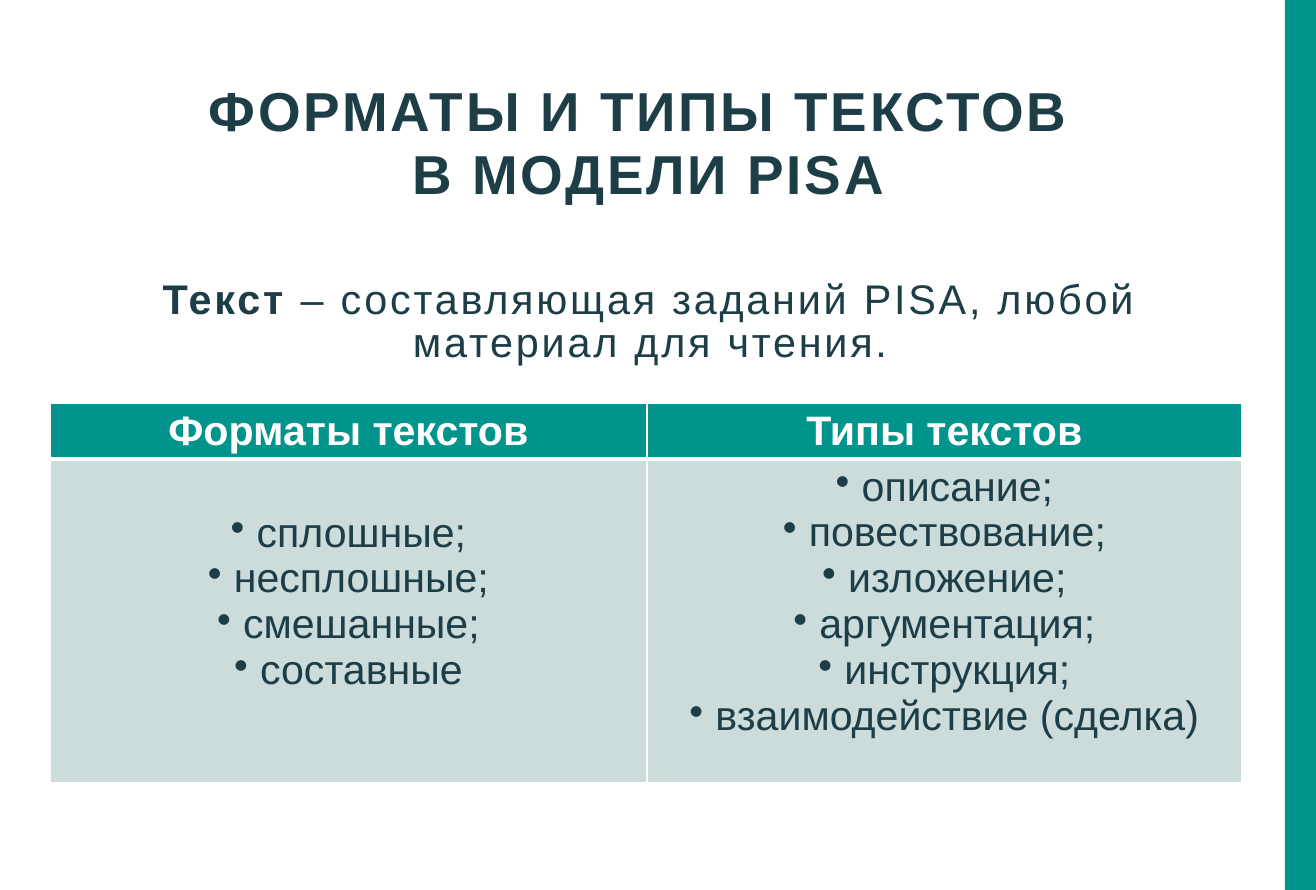
from lxml import etree
from pptx import Presentation
from pptx import util as u
from pptx.dml.color import RGBColor
from pptx.enum import shapes, text
from pptx.oxml import ns

TEAL = RGBColor(0x00, 0x94, 0x8C)
NAVY = RGBColor(0x1D, 0x3D, 0x47)
PALE = RGBColor(0xCC, 0xDC, 0xDA)
WHITE = RGBColor(0xFF, 0xFF, 0xFF)

EMU_PER_PX = 9264
PAGE_WIDTH, PAGE_HEIGHT = 1316, 890


def px(length):
    return u.Emu(length * EMU_PER_PX)


def assign(target, values):
    for name, value in values.items():
        setattr(target, name, value)


class PageBuilder:
    """Holds the common text style and the current slide."""

    font = "Arial"

    def __init__(self, deck):
        self.page = deck.slides.add_slide(deck.slide_layouts[1])

    def add_text(self, para, content, size, color=NAVY, bold=False, spacing=0):
        para.alignment = text.PP_ALIGN.CENTER
        for index, line in enumerate(content.split("\n")):
            if index:
                para.add_line_break()
            span = para.add_run()
            span.text = line
            assign(span.font, {"name": self.font, "size": u.Pt(size), "bold": bold})
            span.font.color.rgb = color
            if spacing:
                span._r.get_or_add_rPr().set("spc", str(spacing * 100))

    def bullet(self, para, char=None):
        props = para._p.get_or_add_pPr()
        props.set("marL", "0")
        props.set("indent", "0")
        mark = etree.SubElement(props, ns.qn("a:buChar" if char else "a:buNone"))
        if char:
            mark.set("char", char)

    def bar(self, left, top, width, height, color):
        box = self.page.shapes.add_shape(
            shapes.MSO_SHAPE.RECTANGLE, px(left), px(top), px(width), px(height))
        box.shadow.inherit = False
        box.fill.solid()
        box.fill.fore_color.rgb = color
        box.line.fill.background()

    def placeholder(self, index, left, top, width, height, inset, line_spacing):
        box = self.page.placeholders[index]
        assign(box, {"left": px(left), "top": px(top),
                     "width": px(width), "height": px(height)})
        assign(box.text_frame, {
            "word_wrap": True, "auto_size": text.MSO_AUTO_SIZE.NONE,
            "vertical_anchor": text.MSO_ANCHOR.TOP, "margin_top": px(inset)})
        para = box.text_frame.paragraphs[0]
        assign(para, {"line_spacing": line_spacing, "space_before": u.Pt(0)})
        return para

    def border(self, cell, side, width):
        line = etree.SubElement(cell._tc.get_or_add_tcPr(), ns.qn(f"a:ln{side}"))
        line.set("w", str(u.Pt(width)))
        fill = etree.SubElement(line, ns.qn("a:solidFill"))
        etree.SubElement(fill, ns.qn("a:srgbClr")).set("val", str(WHITE))

    def cell(self, cell, lines, fill, color, bold, inset, char=None, top=1, bottom=1):
        for side, width in {"L": 1, "R": 1, "T": top, "B": bottom}.items():
            self.border(cell, side, width)
        cell.fill.solid()
        cell.fill.fore_color.rgb = fill
        cell.margin_top = px(inset)
        frame = cell.text_frame
        for index, line in enumerate(lines):
            para = frame.add_paragraph() if index else frame.paragraphs[0]
            self.add_text(para, line, 30, color, bold)
            if char:
                self.bullet(para, char)

    def table(self, left, top, widths, heights, columns):
        table = self.page.shapes.add_table(
            len(heights), len(widths), px(left), px(top),
            px(sum(widths)), px(sum(heights))).table
        for row, height in zip(table.rows, heights):
            row.height = px(height)
        for index, (width, (heading, items, inset)) in enumerate(zip(widths, columns)):
            table.columns[index].width = px(width)
            self.cell(table.cell(0, index), [heading], TEAL, WHITE, True, 5, bottom=3)
            self.cell(table.cell(1, index), [f" {item}" for item in items],
                      PALE, NAVY, False, inset, "•", top=3)


def main():
    deck = Presentation()
    assign(deck, {"slide_width": px(PAGE_WIDTH), "slide_height": px(PAGE_HEIGHT)})
    builder = PageBuilder(deck)

    # Right edge band
    builder.bar(1285, 0, PAGE_WIDTH - 1285, PAGE_HEIGHT, TEAL)

    # Title
    title = builder.placeholder(0, 64, 76, 1169, 167, 5, 0.96)
    builder.add_text(title, "ФОРМАТЫ И ТИПЫ ТЕКСТОВ \nВ МОДЕЛИ PISA", 40,
                     bold=True, spacing=2)

    # Definition
    definition = builder.placeholder(1, 64, 245, 1173, 137, 35, 0.87)
    builder.add_text(definition, "Текст", 30.2, bold=True, spacing=2)
    builder.add_text(definition, " – составляющая заданий PISA, любой материал для чтения.",
                     30.2, spacing=2)
    builder.bullet(definition)

    # Formats and types
    formats = ["сплошные;", "несплошные;", "смешанные;", "составные"]
    types = ["описание;", "повествование;", "изложение;", "аргументация;",
             "инструкция;", "взаимодействие (сделка)"]
    builder.table(50, 403, [597, 595], [55, 324], [
        ("Форматы текстов", formats, 51),
        ("Типы текстов", types, 5),
    ])

    deck.save("out.pptx")


if __name__ == "__main__":
    main()
